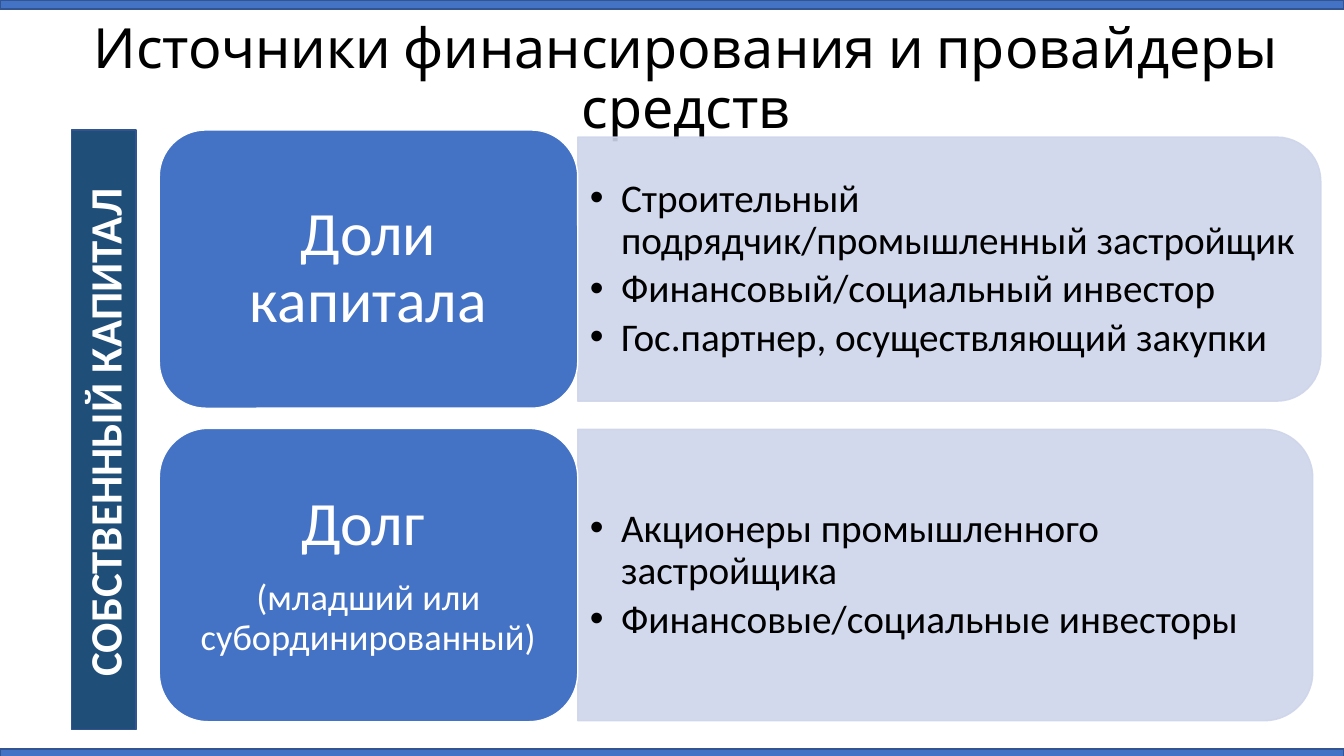
from lxml.etree import SubElement
from pptx import Presentation
from pptx.dml.color import RGBColor
from pptx.enum.shapes import MSO_SHAPE as SHAPE
from pptx.enum.text import MSO_ANCHOR as ANCHOR, MSO_AUTO_SIZE as AUTO_SIZE, PP_ALIGN as ALIGN
from pptx.oxml.ns import qn
from pptx.util import Inches, Pt

WIDTH, HEIGHT = 13.33, 7.5
BLUE, NAVY, EDGE, PALE, WHITE, BLACK = "4472C4", "1F4E79", "325491", "CFD5EA", "FFFFFF", "000000"
CARD_LEFT, CARD_WIDTH = 1.58, 4.15
PANEL_LEFT = CARD_LEFT + CARD_WIDTH
BAR_HEIGHT = 0.09

prs = Presentation()
prs.slide_width, prs.slide_height = Inches(WIDTH), Inches(HEIGHT)
slide = prs.slides.add_slide(prs.slide_layouts[5])


def add_block(preset, left, top, width, height, fill, edge):
    block = slide.shapes.add_shape(preset, *map(Inches, (left, top, width, height)))
    block.shadow.inherit = False
    block.fill.solid()
    block.fill.fore_color.rgb = RGBColor.from_string(fill)
    block.line.color.rgb = RGBColor.from_string(edge)
    block.line.width = Pt(1)
    return block


def add_text(paragraph, text, size, color, font="Calibri", bold=False):
    run = paragraph.add_run()
    run.text = text
    run.font.name, run.font.size, run.font.bold = font, Pt(size), bold
    run.font.color.rgb = RGBColor.from_string(color)


title = slide.shapes.title
title.left, title.top, title.width, title.height = map(Inches, (0.71, 0.41, 12.19, 0.78))
title.text_frame.auto_size = AUTO_SIZE.NONE
title.text_frame.vertical_anchor = ANCHOR.MIDDLE
heading = title.text_frame.paragraphs[0]
heading.alignment, heading.line_spacing = ALIGN.CENTER, 0.9
add_text(heading, "Источники финансирования и провайдеры средств", 39.6, BLACK, "Cabin")

# Each source: card top and height, panel width and height, card lines, providers
sources = [
    (1.29, 2.76, 7.37, 2.62, [[("Доли капитала", 44)]],
     ["Строительный подрядчик/промышленный застройщик",
      "Финансовый/социальный инвестор",
      "Гос.партнер, осуществляющий закупки"]),
    (4.25, 2.91, 7.29, 2.89, [[("Долг", 44), (" ", 36)], [("(младший или субординированный)", 26)]],
     ["Акционеры промышленного застройщика",
      "Финансовые/социальные инвесторы"]),
]
for top, height, panel_width, panel_height, card_lines, providers in sources:
    middle = top + height / 2

    # The panel is an upright shape turned so that its round corners face right
    panel = add_block(SHAPE.ROUND_2_SAME_RECTANGLE, PANEL_LEFT + (panel_width - panel_height) / 2,
                      middle - panel_width / 2, panel_height, panel_width, PALE, PALE)
    panel.rotation = 90
    for color in panel.element.spPr.iter(qn("a:srgbClr")):
        SubElement(color, qn("a:alpha"), val="90000")

    provider_list = slide.shapes.add_textbox(
        Inches(PANEL_LEFT), Inches(middle - panel_height / 2 + 0.13),
        Inches(panel_width - 0.13), Inches(panel_height - 0.26)).text_frame
    provider_list.word_wrap = True
    provider_list.vertical_anchor = ANCHOR.MIDDLE
    provider_list.margin_left = provider_list.margin_right = Inches(0.12)
    provider_list.margin_top = provider_list.margin_bottom = Inches(0.06)
    for i, provider in enumerate(providers):
        item = provider_list.add_paragraph() if i else provider_list.paragraphs[0]
        item.level, item.line_spacing, item.space_after = 1, 0.9, Pt(4.2)
        props = item._p.get_or_add_pPr()
        props.set("marL", str(Inches(0.31)))
        props.set("indent", str(-Inches(0.31)))
        SubElement(props, qn("a:buFont"), typeface="Arial")
        SubElement(props, qn("a:buChar"), char="•")
        add_text(item, provider, 28, BLACK)

    card = add_block(SHAPE.ROUNDED_RECTANGLE, CARD_LEFT, top, CARD_WIDTH, height, BLUE, WHITE).text_frame
    card.word_wrap = True
    card.vertical_anchor = ANCHOR.MIDDLE
    card.margin_left = card.margin_right = Inches(0.18)
    card.margin_top = card.margin_bottom = Inches(0.09)
    for i, pieces in enumerate(card_lines):
        line = card.add_paragraph() if i else card.paragraphs[0]
        line.alignment, line.line_spacing, line.space_after = ALIGN.CENTER, 0.9, Pt(15)
        for text, size in pieces:
            add_text(line, text, size, WHITE)

equity = add_block(SHAPE.RECTANGLE, 0.71, 1.29, 0.64, 5.95, NAVY, EDGE).text_frame
equity.vertical_anchor = ANCHOR.MIDDLE
equity._txBody.bodyPr.set("vert", "vert270")
equity_label = equity.paragraphs[0]
equity_label.alignment = ALIGN.CENTER
add_text(equity_label, "СОБСТВЕННЫЙ КАПИТАЛ", 32, WHITE, bold=True)
add_text(equity_label, " ", 18, WHITE)

for bar_top in (HEIGHT - 0.07, 0):
    add_block(SHAPE.RECTANGLE, 0, bar_top, WIDTH, BAR_HEIGHT, BLUE, EDGE)

prs.save("out.pptx")
